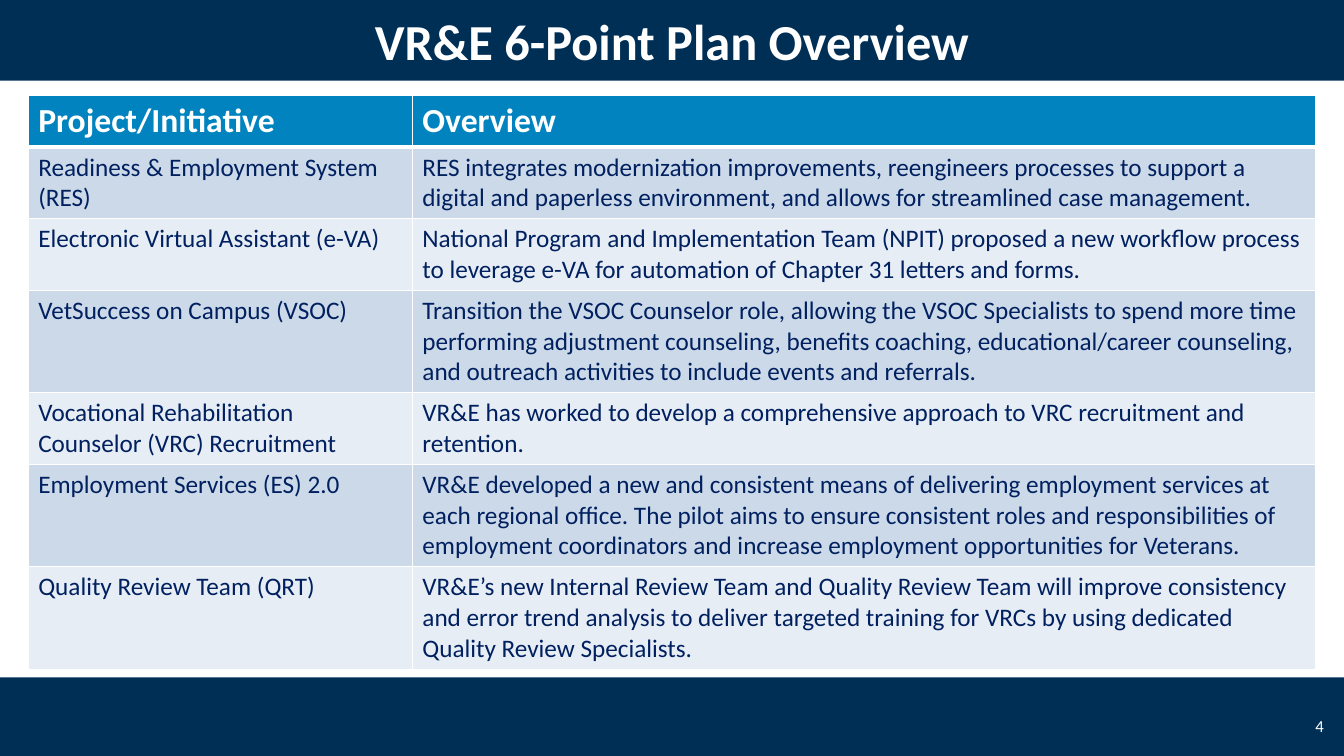
from dataclasses import dataclass

from lxml import etree
from pptx import Presentation
from pptx.dml.color import RGBColor
from pptx.enum.shapes import MSO_SHAPE
from pptx.enum.text import MSO_ANCHOR, MSO_AUTO_SIZE, PP_ALIGN
from pptx.oxml.ns import qn
from pptx.util import Inches, Pt

RECTANGLE = MSO_SHAPE.RECTANGLE
MIDDLE = MSO_ANCHOR.MIDDLE
NO_AUTOFIT = MSO_AUTO_SIZE.NONE
LEFT, CENTER, RIGHT = PP_ALIGN.LEFT, PP_ALIGN.CENTER, PP_ALIGN.RIGHT


@dataclass(frozen=True)
class Theme:
    font: str = "Calibri"
    navy: str = "002F56"
    header: str = "0083BE"
    row_fills: tuple = ("CCD9E8", "E7EDF4")
    text: str = "002060"
    white: str = "FFFFFF"
    title_size: int = 36
    header_size: int = 24
    body_size: int = 18
    number_size: int = 12


THEME = Theme()
SLIDE_WIDTH, SLIDE_HEIGHT = 13.33, 7.5
BAND_HEIGHT = 0.8
FOOTER_TOP = 6.72
COLUMN_WIDTHS = (3.81, 8.96)
HEADER_HEIGHT = 0.51
TWO_LINES, THREE_LINES = 0.71, 1.01

HEADINGS = ("Project/Initiative", "Overview")
INITIATIVES = (
    ("Readiness & Employment System (RES)",
     "RES integrates modernization improvements, reengineers processes to support a digital "
     "and paperless environment, and allows for streamlined case management.", TWO_LINES),
    ("Electronic Virtual Assistant (e-VA)",
     "National Program and Implementation Team (NPIT) proposed a new workflow process to "
     "leverage e-VA for automation of Chapter 31 letters and forms.", TWO_LINES),
    ("VetSuccess on Campus (VSOC)",
     "Transition the VSOC Counselor role, allowing the VSOC Specialists to spend more time "
     "performing adjustment counseling, benefits coaching, educational/career counseling, "
     "and outreach activities to include events and referrals.", THREE_LINES),
    ("Vocational Rehabilitation Counselor (VRC) Recruitment",
     "VR&E has worked to develop a comprehensive approach to VRC recruitment and retention.",
     TWO_LINES),
    ("Employment Services (ES) 2.0",
     "VR&E developed a new and consistent means of delivering employment services at each "
     "regional office. The pilot aims to ensure consistent roles and responsibilities of "
     "employment coordinators and increase employment opportunities for Veterans.",
     THREE_LINES),
    ("Quality Review Team (QRT)",
     "VR&E’s new Internal Review Team and Quality Review Team will improve consistency and "
     "error trend analysis to deliver targeted training for VRCs by using dedicated Quality "
     "Review Specialists.", THREE_LINES),
)


def write(text_frame, text, size, color, bold=False, align=LEFT):
    text_frame.text = text
    paragraph = text_frame.paragraphs[0]
    paragraph.alignment = align
    paragraph.font.name = THEME.font
    paragraph.font.size = Pt(size)
    paragraph.font.bold = bold
    paragraph.font.color.rgb = RGBColor.from_string(color)


def add_band(slide, left, top, width, height):
    band = slide.shapes.add_shape(
        RECTANGLE, Inches(left), Inches(top), Inches(width), Inches(height))
    band.shadow.inherit = False
    band.fill.solid()
    band.fill.fore_color.rgb = RGBColor.from_string(THEME.navy)
    band.line.fill.background()


def add_header(slide, left, top, width, height):
    add_band(slide, left, top, width, height)
    title = slide.shapes.title
    slide.shapes._spTree.append(title._element)
    margin = 0.67
    title.left, title.top = Inches(left + margin), Inches(top)
    title.width, title.height = Inches(width - 2 * margin), Inches(height)
    title.text_frame.auto_size = NO_AUTOFIT
    title.text_frame.vertical_anchor = MIDDLE
    write(title.text_frame, "VR&E 6-Point Plan Overview", THEME.title_size,
          THEME.white, True, CENTER)


def add_footer(slide, left, top, width, height):
    add_band(slide, left, top, width, height)
    number_width = 0.56
    number = slide.shapes.add_textbox(
        Inches(left + width - 0.1 - number_width), Inches(top + 0.28),
        Inches(number_width), Inches(0.4))
    number.text_frame.word_wrap = True
    number.text_frame.vertical_anchor = MIDDLE
    write(number.text_frame, "4", THEME.number_size, THEME.white, align=RIGHT)


def set_borders(cell, top, bottom):
    properties = cell._tc.get_or_add_tcPr()
    for side, points in (("L", 1), ("R", 1), ("T", top), ("B", bottom)):
        line = etree.SubElement(properties, qn(f"a:ln{side}"), w=str(Pt(points)))
        fill = etree.SubElement(line, qn("a:solidFill"))
        etree.SubElement(fill, qn("a:srgbClr"), val=THEME.white)


def add_initiatives(slide, left, top, widths):
    heights = [HEADER_HEIGHT] + [height for _, _, height in INITIATIVES]
    table = slide.shapes.add_table(
        len(heights), len(widths), Inches(left), Inches(top),
        Inches(sum(widths)), Inches(sum(heights))).table
    for column, width in zip(table.columns, widths):
        column.width = Inches(width)
    rows = [HEADINGS] + [(name, overview) for name, overview, _ in INITIATIVES]
    for index, (texts, height) in enumerate(zip(rows, heights)):
        table.rows[index].height = Inches(height)
        is_header = index == 0
        fill = THEME.header if is_header else THEME.row_fills[(index - 1) % 2]
        size = THEME.header_size if is_header else THEME.body_size
        color = THEME.white if is_header else THEME.text
        for cell, text in zip(table.rows[index].cells, texts):
            set_borders(cell, 3 if index == 1 else 1, 3 if is_header else 1)
            cell.fill.solid()
            cell.fill.fore_color.rgb = RGBColor.from_string(fill)
            write(cell.text_frame, text, size, color, is_header)


def main():
    presentation = Presentation()
    presentation.slide_width = Inches(SLIDE_WIDTH)
    presentation.slide_height = Inches(SLIDE_HEIGHT)
    slide = presentation.slides.add_slide(
        presentation.slide_layouts.get_by_name("Title Only"))
    add_footer(slide, 0, FOOTER_TOP, SLIDE_WIDTH, SLIDE_HEIGHT - FOOTER_TOP)
    add_header(slide, 0, 0, SLIDE_WIDTH, BAND_HEIGHT)
    add_initiatives(slide, 0.28, 0.95, COLUMN_WIDTHS)
    presentation.save("out.pptx")


if __name__ == "__main__":
    main()
